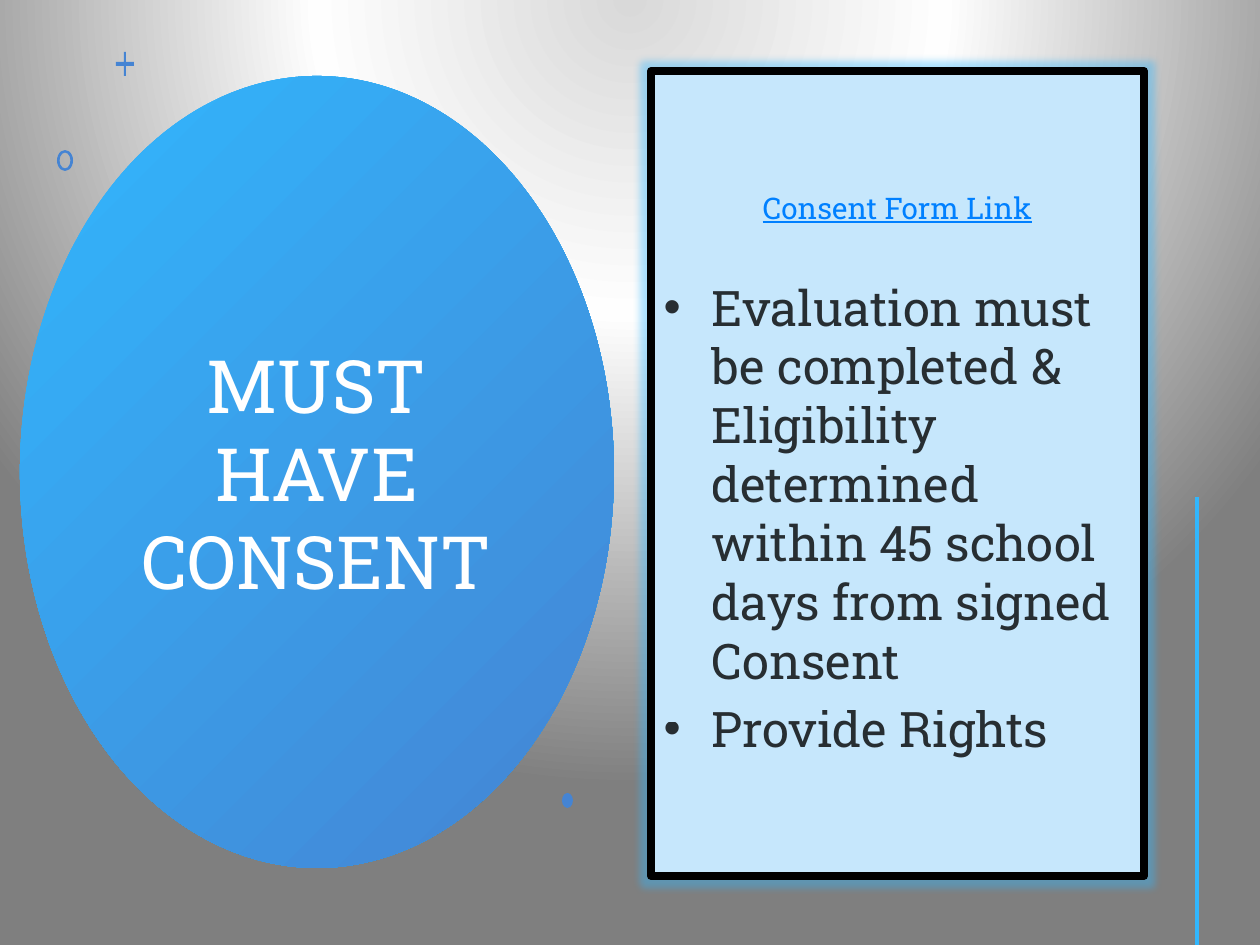
from pptx import Presentation
from pptx.dml.color import RGBColor
from pptx.enum.shapes import MSO_CONNECTOR, MSO_SHAPE as SHAPE
from pptx.enum.text import MSO_ANCHOR as ANCHOR, MSO_AUTO_SIZE as AUTO, PP_ALIGN as ALIGN
from pptx.oxml import parse_xml
from pptx.oxml.ns import nsdecls, qn
from pptx.util import Pt
from lxml.etree import SubElement

PX = 914400 / 126
SKY = RGBColor(0x31, 0xB6, 0xFD)
BLUE = RGBColor(0x45, 0x84, 0xD3)
PALE = RGBColor(0xC6, 0xE7, 0xFC)
LINK = RGBColor(0x00, 0x80, 0xFF)
BLACK = RGBColor(0x00, 0x00, 0x00)
WHITE = RGBColor(0xFF, 0xFF, 0xFF)
BACKDROP = [(0, "D9D9D9"), (40, "FEFEFE"), (100, "7F7F7F")]


def emu(n):
    return round(n * PX)


def write(p, text, size, color, font="Roboto Slab", align=None, underline=None, alpha=None):
    p.alignment = align
    r = p.add_run()
    r.text = text
    r.font.name, r.font.size, r.font.underline = font, Pt(size), underline
    r.font.color.rgb = color
    if alpha:
        clr = r.font.fill._xPr.find(qn("a:solidFill"))[0]
        SubElement(clr, qn("a:alpha"), val=str(alpha * 1000))


class Deck:
    def __init__(self, width, height):
        self.prs = Presentation()
        self.prs.slide_width, self.prs.slide_height = emu(width), emu(height)
        self.s = self.prs.slides.add_slide(self.prs.slide_layouts[1])

    def background(self, stops):
        self.s.background.fill.solid()
        bg_pr = self.s._element.cSld.bg.bgPr
        gs = "".join(f'<a:gs pos="{pos * 1000}"><a:srgbClr val="{c}"/></a:gs>' for pos, c in stops)
        bg_pr.replace(bg_pr[0], parse_xml(
            f'<a:gradFill {nsdecls("a")} rotWithShape="1"><a:gsLst>{gs}</a:gsLst><a:path path="circle">'
            '<a:fillToRect l="50000" t="-80000" r="50000" b="180000"/></a:path></a:gradFill>'))

    def fill(self, sp, color):
        sp.shadow.inherit = False
        sp.line.fill.background()
        sp.fill.solid()
        sp.fill.fore_color.rgb = color

    def shape(self, kind, x, y, w, h, color):
        sp = self.s.shapes.add_shape(kind, *map(emu, (x, y, w, h)))
        self.fill(sp, color)
        return sp

    def gradient(self, sp, start, end):
        sp.fill.gradient()
        sp.fill.gradient_angle = 315
        for stop, pos, color in zip(sp.fill.gradient_stops, (0, 1), (start, end)):
            stop.position, stop.color.rgb = pos, color

    def plus(self, cx, cy, w, h, bar_w, bar_h, color):
        """Plus sign from half sizes: overall w, h and bar thickness bar_w, bar_h."""
        corner = [(bar_w, h), (bar_w, bar_h), (w, bar_h)]
        pts = []
        for sx, sy, step in ((1, -1, 1), (1, 1, -1), (-1, 1, 1), (-1, -1, -1)):
            pts += [(cx + sx * x, cy + sy * y) for x, y in corner[::step]]
        fb = self.s.shapes.build_freeform(*pts[0], scale=PX)
        fb.add_line_segments(pts[1:], close=True)
        self.fill(fb.convert_to_shape(), color)

    def line(self, x1, y1, x2, y2, color, width):
        ln = self.s.shapes.add_connector(MSO_CONNECTOR.STRAIGHT, *map(emu, (x1, y1, x2, y2)))
        ln.line.color.rgb, ln.line.width = color, Pt(width)
        SubElement(ln._element.spPr, qn("a:effectLst"))

    def placeholder(self, idx, x, y, w, h):
        """Place a template placeholder in front of what is drawn so far."""
        sp = self.s.placeholders[idx]
        sp.left, sp.top, sp.width, sp.height = map(emu, (x, y, w, h))
        self.s.shapes._spTree.append(sp._element)
        tf = sp.text_frame
        tf.word_wrap, tf.auto_size, tf.vertical_anchor = True, AUTO.NONE, ANCHOR.MIDDLE
        return sp

    def glow(self, sp, color, radius, alpha):
        sp._element.spPr.append(parse_xml(
            f'<a:effectLst {nsdecls("a")}><a:glow rad="{emu(radius)}"><a:srgbClr val="{color}">'
            f'<a:alpha val="{alpha * 1000}"/></a:srgbClr></a:glow></a:effectLst>'))

    def bullet(self, p, indent, char="•"):
        p_pr = p._p.get_or_add_pPr()
        p_pr.set("marL", str(emu(indent)))
        p_pr.set("indent", str(-emu(indent)))
        SubElement(p_pr, qn("a:buFont"), typeface="Arial")
        SubElement(p_pr, qn("a:buChar"), char=char)

    def plain(self, p):
        p_pr = p._p.get_or_add_pPr()
        p_pr.set("marL", "0")
        p_pr.set("indent", "0")
        SubElement(p_pr, qn("a:buNone"))


def main():
    deck = Deck(1260, 945)
    deck.background(BACKDROP)

    # Title on the large ellipse
    ellipse = deck.shape(SHAPE.OVAL, 20, 76, 594, 792, SKY)
    deck.gradient(ellipse, SKY, BLUE)
    title = deck.placeholder(0, 128, 178, 377, 588)
    write(title.text_frame.paragraphs[0], "MUST HAVE CONSENT", 42, WHITE, align=ALIGN.CENTER)

    # Small ornaments
    deck.plus(125, 64, 9, 12, 1, 2, BLUE)
    ring = deck.shape(SHAPE.DONUT, 57, 150, 16, 21, BLUE)
    ring.adjustments[0] = 0.16

    # Consent panel
    panel = deck.placeholder(1, 651, 71, 493, 805)
    panel.fill.solid()
    panel.fill.fore_color.rgb = PALE
    panel.line.color.rgb, panel.line.width = BLACK, Pt(4.5)
    SubElement(panel.line._ln, qn("a:round"))
    deck.glow(panel, SKY, 14, 40)
    tf = panel.text_frame
    p = tf.paragraphs[0]
    p.space_after = Pt(24)
    deck.plain(p)
    write(p, "Consent Form Link", 17, LINK, align=ALIGN.CENTER, underline=True)
    for text in ("Evaluation must be completed & Eligibility determined within 45 school "
                 "days from signed Consent", "Provide Rights"):
        p = tf.add_paragraph()
        deck.bullet(p, 48)
        write(p, text, 28, BLACK, alpha=80)

    # Dot and side line
    deck.shape(SHAPE.OVAL, 562, 793, 11, 15, BLUE)
    deck.line(1197, 497, 1197, 945, SKY, 2)

    deck.prs.save("out.pptx")


if __name__ == "__main__":
    main()
